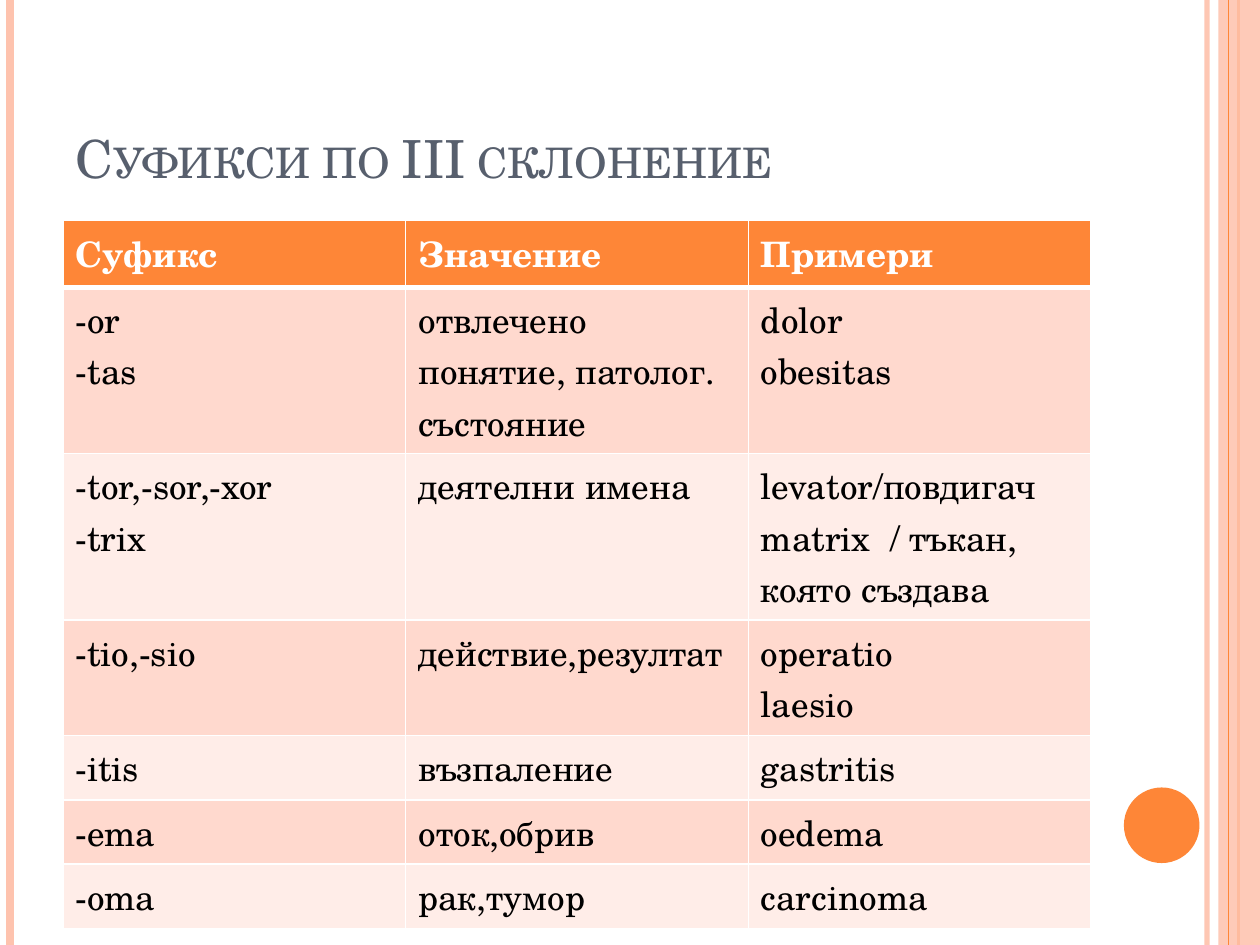
from dataclasses import dataclass

from lxml import etree
from pptx import Presentation
from pptx import util as u
from pptx.dml.color import RGBColor
from pptx.enum import shapes, text
from pptx.oxml import ns


@dataclass(frozen=True)
class Theme:
    font: str = "TeX Gyre Schola"
    title_size: float = 30
    table_size: float = 20
    title: str = "575F6D"
    accent: str = "FE8637"
    pale: str = "FEC3AE"
    white: str = "FFFFFF"
    black: str = "000000"
    bands: tuple = ("FFD9CE", "FFEDE8")


THEME = Theme()
HEADER = ("Суфикс", "Значение", "Примери")
ROWS = (
    ("-or\n-tas", "отвлечено понятие, патолог. състояние", "dolor\nobesitas"),
    ("-tor,-sor,-xor\n-trix", "деятелни имена", "levator/повдигач\nmatrix  / тъкан, която създава"),
    ("-tio,-sio", "действие,резултат", "operatio\nlaesio"),
    ("-itis", "възпаление", "gastritis"),
    ("-ema", "оток,обрив", "oedema"),
    ("-oma", "рак,тумор", "carcinoma"),
)
ROW_HEIGHTS = (0.53, 1.32, 1.32, 0.92, 0.51, 0.51, 0.51)


def rgb(color):
    return RGBColor.from_string(color)


def add_child(parent, tag, **attributes):
    return etree.SubElement(parent, ns.qn(tag), **attributes)


def set_opacity(element, percent):
    color = next(element.iter(ns.qn("a:srgbClr")))
    add_child(color, "a:alpha", val=str(percent * 1000))


def add_run(paragraph, content, size, color, bold=False):
    run = paragraph.add_run()
    run.text = content
    run.font.name = THEME.font
    run.font.size = u.Pt(size)
    run.font.bold = bold
    run.font.color.rgb = rgb(color)
    return run


def add_vertical_line(slide, x, color, width, opacity=100):
    x = u.Inches(x)
    line = slide.shapes.add_connector(
        shapes.MSO_CONNECTOR.STRAIGHT, x, 0, x, u.Inches(7.5))
    line.line.color.rgb = rgb(color)
    line.line.width = u.Pt(width)
    properties = line._element.spPr
    if opacity < 100:
        set_opacity(properties, opacity)
    add_child(properties, "a:effectLst")


def add_plain_shape(slide, kind, box, color, opacity=100):
    shape = slide.shapes.add_shape(kind, *map(u.Inches, box))
    shape.shadow.inherit = False
    shape.fill.solid()
    shape.fill.fore_color.rgb = rgb(color)
    shape.line.fill.background()
    if opacity < 100:
        set_opacity(shape._element.spPr, opacity)


def add_title(slide, content):
    box = slide.shapes.add_textbox(*map(u.Inches, (0.5, 0.3, 8.17, 1.25)))
    frame = box.text_frame
    frame.word_wrap = True
    frame.vertical_anchor = text.MSO_ANCHOR.BOTTOM
    run = add_run(frame.paragraphs[0], content, THEME.title_size, THEME.title)
    run._r.get_or_add_rPr().set("cap", "small")


def set_borders(cell, top, bottom):
    properties = cell._tc.get_or_add_tcPr()
    for side, width in (("L", 1), ("R", 1), ("T", top), ("B", bottom)):
        border = add_child(properties, f"a:ln{side}", w=str(u.Pt(width)))
        add_child(add_child(border, "a:solidFill"), "a:srgbClr", val=THEME.white)


def fill_cell(cell, content, fill, color, bold):
    cell.fill.solid()
    cell.fill.fore_color.rgb = rgb(fill)
    frame = cell.text_frame
    for index, line in enumerate(content.split("\n")):
        paragraph = frame.add_paragraph() if index else frame.paragraphs[0]
        add_run(paragraph, line, THEME.table_size, color, bold)


def add_suffix_table(slide):
    rows = (HEADER, *ROWS)
    frame = slide.shapes.add_table(
        len(rows), len(HEADER), u.Inches(0.5), u.Inches(1.75),
        u.Inches(8.16), u.Inches(sum(ROW_HEIGHTS)))
    for row_index, (row, height) in enumerate(zip(rows, ROW_HEIGHTS)):
        frame.table.rows[row_index].height = u.Inches(height)
        is_header = row_index == 0
        fill = THEME.accent if is_header else THEME.bands[(row_index - 1) % 2]
        color = THEME.white if is_header else THEME.black
        for column_index, content in enumerate(row):
            cell = frame.table.cell(row_index, column_index)
            set_borders(cell, 3 if row_index == 1 else 1, 3 if is_header else 1)
            fill_cell(cell, content, fill, color, is_header)


def add_decoration(slide):
    add_vertical_line(slide, 9.58, THEME.pale, 3, 93)
    add_vertical_line(slide, 0.08, THEME.pale, 4.5)
    add_vertical_line(slide, 9.83, THEME.accent, 1.5)
    add_plain_shape(slide, shapes.MSO_SHAPE.RECTANGLE, (9.67, 0, 0.33, 7.5), THEME.pale, 87)
    add_vertical_line(slide, 9.75, THEME.accent, 0.75)
    add_plain_shape(slide, shapes.MSO_SHAPE.OVAL, (8.92, 6.25, 0.6, 0.6), THEME.accent)


def main():
    presentation = Presentation()
    presentation.slide_width = u.Inches(10)
    presentation.slide_height = u.Inches(7.5)
    slide = presentation.slides.add_slide(presentation.slide_layouts[6])
    add_decoration(slide)
    add_title(slide, "Суфикси по III склонение")
    add_suffix_table(slide)
    presentation.save("out.pptx")


if __name__ == "__main__":
    main()
